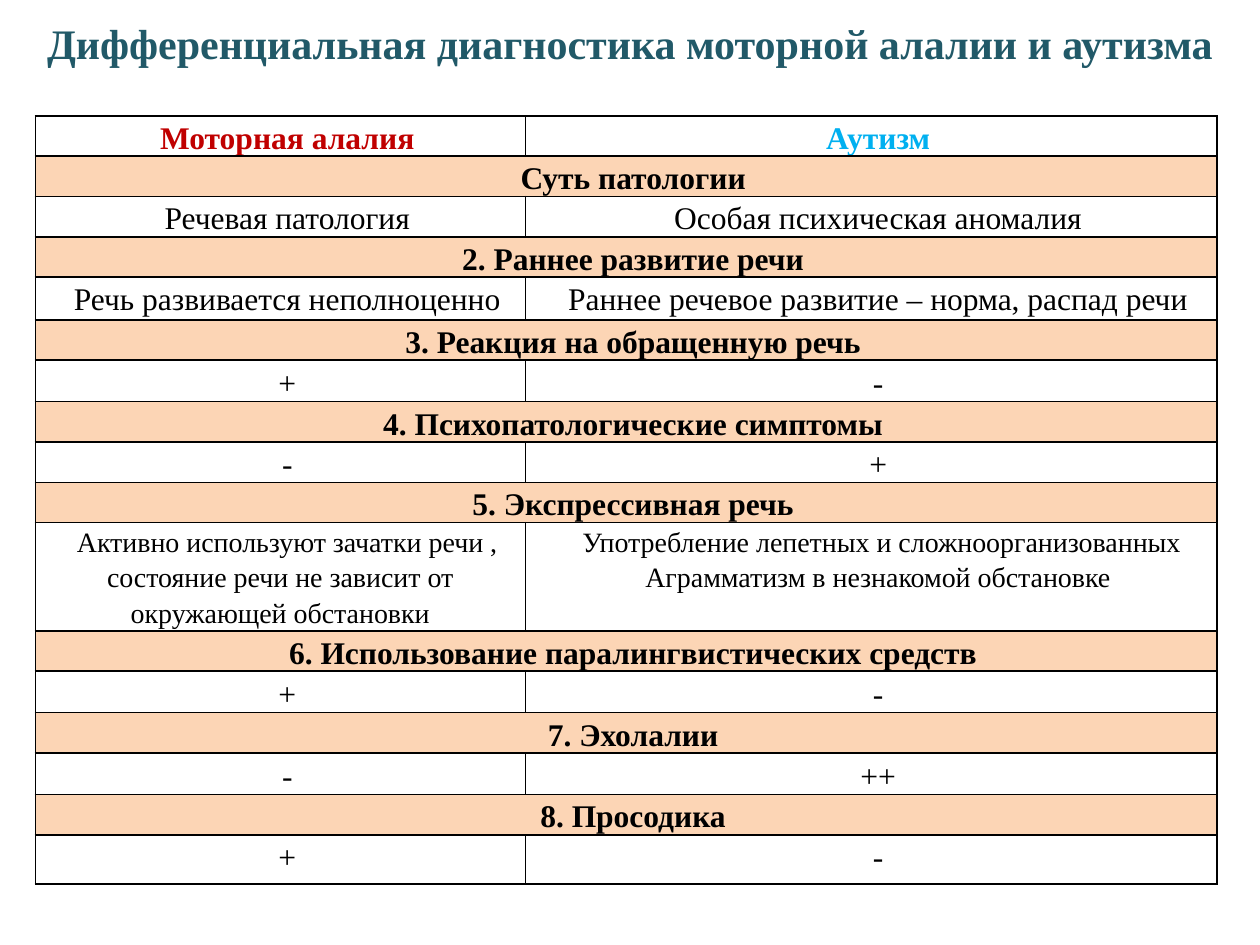
from dataclasses import dataclass

from lxml.etree import SubElement
from pptx import Presentation
from pptx.dml.color import RGBColor
from pptx.enum.text import MSO_ANCHOR, PP_ALIGN
from pptx.oxml.ns import qn
from pptx.util import Inches, Pt


@dataclass(frozen=True)
class Theme:
    font: str = "Times New Roman"
    title: str = "215968"
    alalia: str = "C00000"
    autism: str = "00B0F0"
    text: str = "000000"
    border: str = "000000"
    band: str = "FCD5B5"
    title_size: int = 24
    cell_size: int = 18
    small_size: int = 16


@dataclass(frozen=True)
class Section:
    """A full-width heading and the pair of features compared below it."""
    heading: str
    alalia: str
    autism: str
    height: float = 0.32
    size: int = Theme.cell_size
    padded: bool = False


THEME = Theme()
HEADING_HEIGHT = 0.32
COLUMNS = (3.89, 5.49)
SECTIONS = (
    Section("Суть патологии", "Речевая патология", "Особая психическая аномалия"),
    Section("2. Раннее развитие речи", "Речь развивается неполноценно",
            "Раннее речевое развитие – норма, распад речи", height=0.34),
    Section("3. Реакция на обращенную речь", "+", "-", height=0.33, padded=True),
    Section("4. Психопатологические симптомы", "-", "+"),
    Section("5. Экспрессивная речь",
            "Активно используют зачатки речи , состояние речи не зависит от "
            "окружающей обстановки",
            " Употребление лепетных и сложноорганизованных\n"
            "Аграмматизм в незнакомой обстановке",
            height=0.86, size=THEME.small_size),
    Section("6. Использование паралингвистических средств", "+", "-",
            height=0.33, padded=True),
    Section("7. Эхолалии", "-", "++", height=0.33, padded=True),
    Section("8. Просодика", "+", "-", height=0.39),
)


def add_run(p, text: str, size: int, color: str, bold: bool) -> None:
    r = p.add_run()
    r.text = text
    formats = {"name": THEME.font, "size": Pt(size), "bold": bold}
    for name, value in formats.items():
        setattr(r.font, name, value)
    r.font.color.rgb = RGBColor.from_string(color)


def set_borders(cell) -> None:
    tcPr = cell._tc.get_or_add_tcPr()
    for i, side in enumerate(("lnL", "lnR", "lnT", "lnB")):
        ln = SubElement(tcPr, qn(f"a:{side}"), w=str(Pt(1)))
        fill = SubElement(ln, qn("a:solidFill"))
        SubElement(fill, qn("a:srgbClr"), val=THEME.border)
        tcPr.remove(ln)
        tcPr.insert(i, ln)  # borders come before the fill


def fill_cell(cell, text: str, size: int = THEME.cell_size, color: str = THEME.text,
              bold: bool = False, band: bool = False, padded: bool = False) -> None:
    side, top = (0.06, 0.01) if padded else (0.03, 0)
    margins = {"margin_left": side, "margin_right": side,
               "margin_top": top, "margin_bottom": 0}
    for name, value in margins.items():
        setattr(cell, name, Inches(value))
    if band:
        cell.fill.solid()
        cell.fill.fore_color.rgb = RGBColor.from_string(THEME.band)
    else:
        cell.fill.background()
    set_borders(cell)

    tf = cell.text_frame
    for i, line in enumerate(text.split("\n")):
        p = tf.add_paragraph() if i else tf.paragraphs[0]
        p.alignment, p.line_spacing = PP_ALIGN.CENTER, 1.15
        pPr = p._p.get_or_add_pPr()
        pPr.set("marL", "0")
        pPr.set("indent", str(Inches(0.11)))
        add_run(p, line, size, color, bold)


def add_title(s, text: str) -> None:
    sp = s.shapes.title
    box = {"left": 0, "top": 0, "width": 10, "height": 0.68}
    for name, value in box.items():
        setattr(sp, name, Inches(value))
    tf = sp.text_frame
    tf.vertical_anchor = MSO_ANCHOR.MIDDLE
    p = tf.paragraphs[0]
    p.alignment = PP_ALIGN.CENTER
    add_run(p, text, THEME.title_size, THEME.title, True)


def add_comparison(s) -> None:
    heights = [HEADING_HEIGHT]
    for section in SECTIONS:
        heights += [HEADING_HEIGHT, section.height]
    table = s.shapes.add_table(
        len(heights), len(COLUMNS), Inches(0.28), Inches(0.92),
        Inches(sum(COLUMNS)), Inches(sum(heights))).table
    table.first_row = table.horz_banding = False
    for column, width in zip(table.columns, COLUMNS):
        column.width = Inches(width)
    for row, height in zip(table.rows, heights):
        row.height = Inches(height)

    # Column heads
    fill_cell(table.cell(0, 0), "Моторная алалия", color=THEME.alalia, bold=True)
    fill_cell(table.cell(0, 1), "Аутизм", color=THEME.autism, bold=True)

    # Sections: merged heading row, then the two features
    for i, section in enumerate(SECTIONS):
        row = 2 * i + 1
        heading, merged = table.cell(row, 0), table.cell(row, 1)
        heading.merge(merged)
        fill_cell(heading, section.heading, bold=True, band=True)
        set_borders(merged)
        for col, text in enumerate((section.alalia, section.autism)):
            fill_cell(table.cell(row + 1, col), text, size=section.size,
                      padded=section.padded)


def main() -> None:
    prs = Presentation()
    prs.slide_width, prs.slide_height = Inches(10), Inches(7.5)
    s = prs.slides.add_slide(prs.slide_layouts[5])
    add_title(s, "Дифференциальная диагностика моторной алалии и аутизма")
    add_comparison(s)
    prs.save("out.pptx")


if __name__ == "__main__":
    main()
